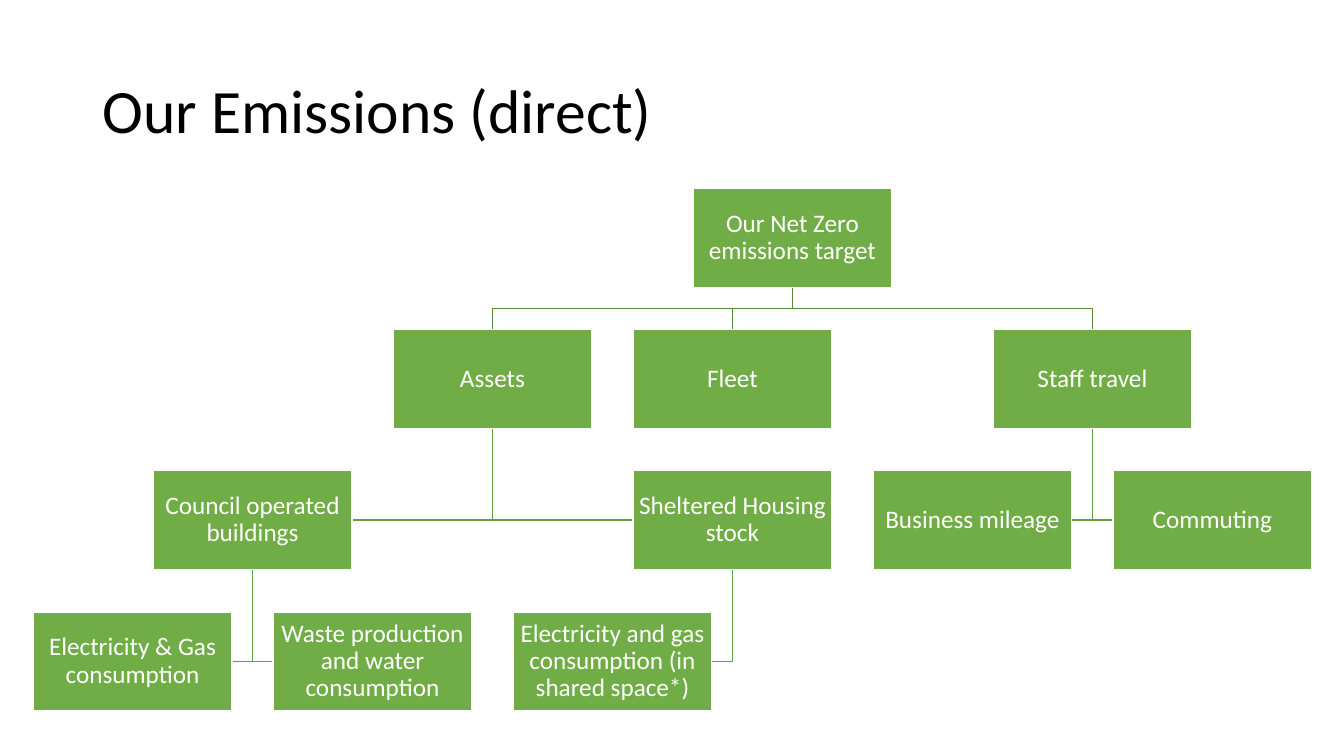
from pptx import Presentation
from pptx.dml.color import RGBColor
from pptx.enum.shapes import MSO_SHAPE
from pptx.enum.text import MSO_ANCHOR, MSO_AUTO_SIZE, PP_ALIGN
from pptx.util import Inches, Pt

COLORS = {"box": "70AD47", "white": "FFFFFF", "title": "000000",
          "upper_line": "5A8B39", "lower_line": "669D40"}
LEFT, TOP = 0.33, 1.87
COLUMN_STEP, ROW_STEP = 1.19, 1.4
BOX_WIDTH, BOX_HEIGHT = 1.97, 0.98

# Each entry: label, column, row, parent
TARGET = "Our Net Zero emissions target"
BUILDINGS = "Council operated buildings"
HOUSING = "Sheltered Housing stock"
EMISSIONS = [
    (TARGET, 5.5, 0, None),
    ("Assets", 3, 1, TARGET),
    ("Fleet", 5, 1, TARGET),
    ("Staff travel", 8, 1, TARGET),
    (BUILDINGS, 1, 2, "Assets"),
    (HOUSING, 5, 2, "Assets"),
    ("Business mileage", 7, 2, "Staff travel"),
    ("Commuting", 9, 2, "Staff travel"),
    ("Electricity & Gas consumption", 0, 3, BUILDINGS),
    ("Waste production and water consumption", 2, 3, BUILDINGS),
    ("Electricity and gas consumption (in shared space*)", 4, 3, HOUSING),
]


def format_text(frame, text, size, color, align):
    frame.text = text
    frame.word_wrap = True
    frame.auto_size = MSO_AUTO_SIZE.NONE
    frame.vertical_anchor = MSO_ANCHOR.MIDDLE
    paragraph = frame.paragraphs[0]
    paragraph.alignment = align
    paragraph.line_spacing = 0.9
    font = paragraph.runs[0].font
    for attribute, value in {"name": "Calibri", "size": Pt(size)}.items():
        setattr(font, attribute, value)
    font.color.rgb = RGBColor.from_string(COLORS[color])


deck = Presentation()
deck.slide_width, deck.slide_height = Inches(13.33), Inches(7.5)
slide = deck.slides.add_slide(deck.slide_layouts[5])

# Title
title = slide.shapes.title
title_place = {"left": 0.92, "top": 0.4, "width": 11.5, "height": 1.45}
for attribute, value in title_place.items():
    setattr(title, attribute, Inches(value))
format_text(title.text_frame, "Our Emissions (direct)", 44, "title", PP_ALIGN.LEFT)

# Branches: a shared bus under the target, side hooks further down
corners = {label: (LEFT + column * COLUMN_STEP, TOP + row * ROW_STEP)
           for label, column, row, parent in EMISSIONS}
for label, column, row, parent in EMISSIONS[1:]:
    x, y = corners[label]
    parent_x, parent_y = corners[parent]
    start_x, start_y = parent_x + BOX_WIDTH / 2, parent_y + BOX_HEIGHT
    if parent == TARGET:
        center_x, bus_y = x + BOX_WIDTH / 2, (start_y + y) / 2
        turns = [(start_x, bus_y), (center_x, bus_y), (center_x, y)]
    else:
        middle_y = y + BOX_HEIGHT / 2
        side_x = x if x > parent_x else x + BOX_WIDTH
        turns = [(start_x, middle_y), (side_x, middle_y)]
    builder = slide.shapes.build_freeform(Inches(start_x), Inches(start_y))
    builder.add_line_segments([(Inches(a), Inches(b)) for a, b in turns], close=False)
    branch = builder.convert_to_shape()
    branch.shadow.inherit = False
    branch.fill.background()
    branch.line.width = Pt(1)
    line_color = COLORS["upper_line" if parent == TARGET else "lower_line"]
    branch.line.color.rgb = RGBColor.from_string(line_color)

# Boxes
for label, (x, y) in corners.items():
    box = slide.shapes.add_shape(MSO_SHAPE.RECTANGLE, Inches(x), Inches(y),
                                 Inches(BOX_WIDTH), Inches(BOX_HEIGHT))
    box.shadow.inherit = False
    box.fill.solid()
    box.fill.fore_color.rgb = RGBColor.from_string(COLORS["box"])
    box.line.color.rgb = RGBColor.from_string(COLORS["white"])
    box.line.width = Pt(1)
    for side in ("left", "top", "right", "bottom"):
        setattr(box.text_frame, f"margin_{side}", Inches(0.01))
    format_text(box.text_frame, label, 18, "white", PP_ALIGN.CENTER)

deck.save("out.pptx")
